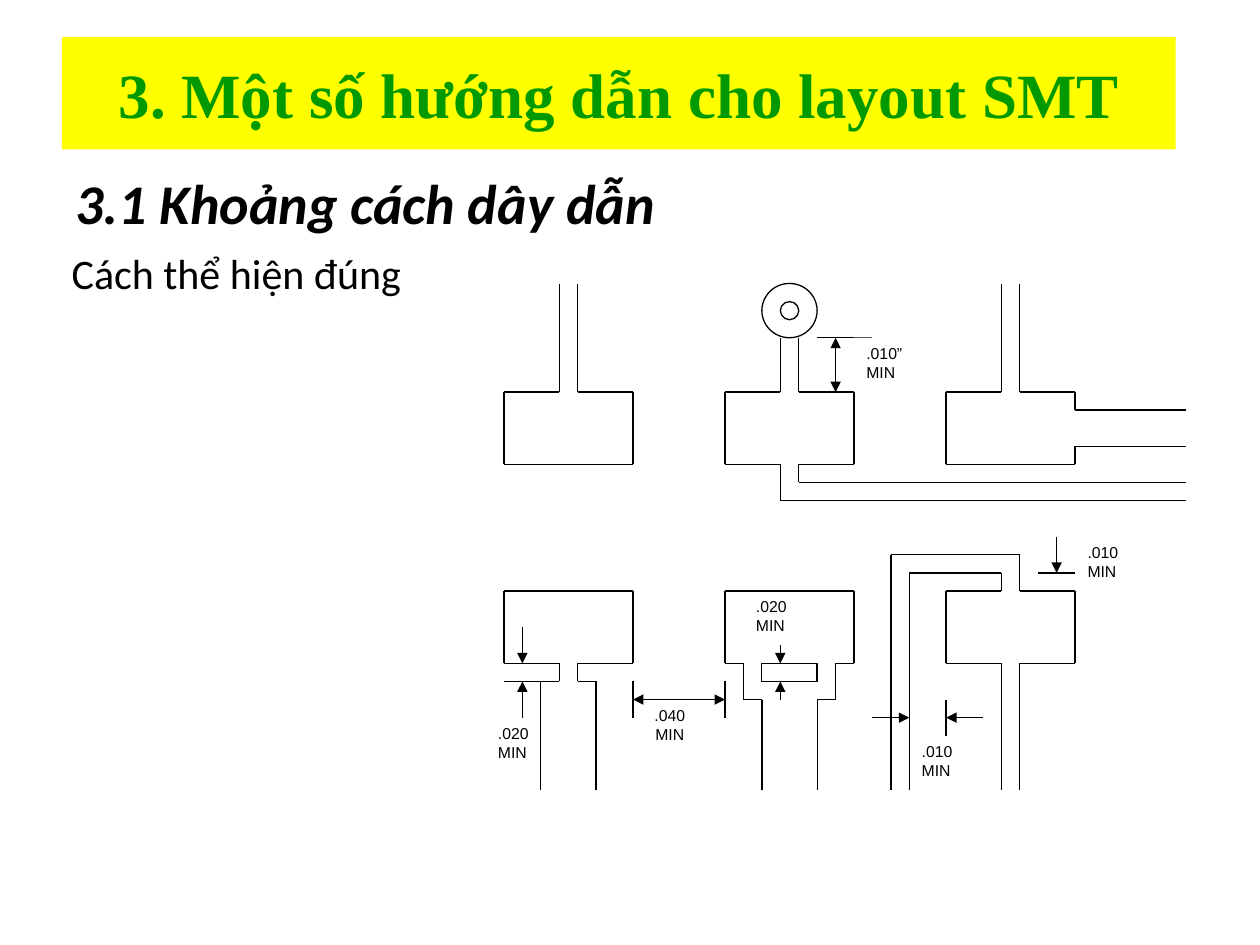
"""Builds the slide on trace spacing for SMT layouts."""
from dataclasses import dataclass
from itertools import pairwise

from lxml import etree
from pptx import Presentation
from pptx import util as u
from pptx.dml.color import RGBColor
from pptx.enum import shapes, text
from pptx.oxml.ns import qn

WIDTH, HEIGHT = 10, 7.5
LEFT, TOP = 4, 2.25
COLUMN, ROW = 5.41 / 37, 4.02 / 28
BLACK, WHITE, YELLOW, GREEN = "000000", "FFFFFF", "FFFF00", "009900"
LEFT_ALIGN, CENTER = text.PP_ALIGN.LEFT, text.PP_ALIGN.CENTER
RECTANGLE, OVAL = shapes.MSO_SHAPE.RECTANGLE, shapes.MSO_SHAPE.OVAL

Point = tuple[int, int]
Cells = tuple[int, int, int, int]


@dataclass
class Label:
    cells: Cells
    value: str
    align: text.PP_ALIGN = LEFT_ALIGN


@dataclass
class Arrow:
    start: Point
    end: Point
    double: bool = False


@dataclass
class Heading:
    area: tuple[float, float, float, float]
    words: str
    size: int
    strong: bool = False


HEADINGS = [
    Heading((0.05, 0.172, 0.876, 0.117), "3.1 Khoảng cách dây dẫn", 32, True),
    Heading((0.047, 0.255, 0.815, 0.125), "Cách thể hiện đúng", 24),
]
PAD_LABELS = [
    Label((22, 25, 4, 3), ".010"),
    Label((13, 17, 5, 4), ".020"),
    Label((7, 23, 4, 3), ".040", CENTER),
    Label((-1, 24, 4, 3), ".020"),
]
EDGE_LABELS = [
    Label((19, 3, 4, 3), ".010”"),
    Label((31, 14, 5, 3), ".010"),
]
OUTLINES = [
    [(3, 0), (3, 6), (0, 6), (0, 10), (7, 10), (7, 6), (4, 6), (4, 0)],
    [(15, 3), (15, 6), (12, 6), (12, 10), (15, 10), (15, 12), (37, 12)],
    [(16, 3), (16, 6), (19, 6), (19, 10), (16, 10), (16, 11), (37, 11)],
    [(27, 0), (27, 6), (24, 6), (24, 10), (31, 10), (31, 9), (37, 9)],
    [(28, 0), (28, 6), (31, 6), (31, 7), (37, 7)],
    [(2, 28), (2, 22), (3, 22), (3, 21), (0, 21), (0, 17),
     (7, 17), (7, 21), (4, 21), (4, 22), (5, 22), (5, 28)],
    [(14, 28), (14, 23), (13, 23), (13, 21), (12, 21), (12, 17),
     (19, 17), (19, 21), (18, 21), (18, 23), (17, 23), (17, 28)],
    [(21, 28), (21, 15), (28, 15), (28, 17), (31, 17), (31, 21), (28, 21), (28, 28)],
    [(22, 28), (22, 16), (27, 16), (27, 17), (24, 17), (24, 21), (27, 21), (27, 28)],
]
EXTENSIONS = [
    [(17, 3), (20, 3)],
    [(2, 22), (0, 22)],
    [(7, 22), (7, 24)],
    [(12, 22), (12, 24)],
    [(24, 23), (24, 25)],
    [(29, 16), (31, 16)],
]
ARROWS = [
    Arrow((18, 3), (18, 6), True),
    Arrow((7, 23), (12, 23), True),
    Arrow((1, 19), (1, 21)),
    Arrow((1, 24), (1, 22)),
    Arrow((15, 20), (15, 21)),
    Arrow((15, 23), (15, 22)),
    Arrow((26, 24), (24, 24)),
    Arrow((20, 24), (22, 24)),
    Arrow((30, 14), (30, 16)),
]


def color(value: str) -> RGBColor:
    """Turn a hex string into a colour."""
    return RGBColor.from_string(value)


def place(point: Point) -> tuple[int, int]:
    """Turn a grid point into slide lengths."""
    return u.Inches(LEFT + point[0] * COLUMN), u.Inches(TOP + point[1] * ROW)


def share(area: tuple[float, float, float, float]) -> list[int]:
    """Turn shares of the slide into lengths."""
    return [u.Inches(part * side) for part, side in zip(area, (WIDTH, HEIGHT) * 2)]


def write(para, words: str, font: str, size: int, ink: str = BLACK, bold=False, italic=False) -> None:
    """Add one formatted run to a paragraph."""
    span = para.add_run()
    span.text = words
    span.font.name, span.font.size = font, u.Pt(size)
    span.font.bold, span.font.italic = bold, italic
    span.font.color.rgb = color(ink)


def draw_shape(page, kind: shapes.MSO_SHAPE, cells: Cells, outlined: bool = True):
    """Draw a white shape covering grid cells."""
    column, row, columns, rows = cells
    box = page.shapes.add_shape(
        kind, *place((column, row)), u.Inches(columns * COLUMN), u.Inches(rows * ROW))
    box.shadow.inherit = False
    box.fill.solid()
    box.fill.fore_color.rgb = color(WHITE)
    if outlined:
        box.line.color.rgb, box.line.width = color(BLACK), u.Pt(0.75)
    else:
        box.line.fill.background()
    return box


def draw_label(page, label: Label) -> None:
    """Draw a minimum distance over its MIN line."""
    frame = draw_shape(page, RECTANGLE, label.cells, False).text_frame
    frame.word_wrap = True
    frame.vertical_anchor = text.MSO_ANCHOR.TOP
    for para, words in zip((frame.paragraphs[0], frame.add_paragraph()), (label.value, "MIN")):
        para.alignment = label.align
        write(para, words, "Arial", 9)


def draw_line(page, start: Point, end: Point, heads: tuple[str, ...] = ()) -> None:
    """Draw a thin line with arrowheads at the named ends."""
    line = page.shapes.add_connector(shapes.MSO_CONNECTOR.STRAIGHT, *place(start), *place(end))
    line.line.color.rgb, line.line.width = color(BLACK), u.Pt(0.75)
    for head in heads:
        etree.SubElement(line.line._get_or_add_ln(), qn(f"a:{head}"), type="triangle")
    etree.SubElement(line._element.spPr, qn("a:effectLst"))


def draw_heading(page, heading: Heading) -> None:
    """Draw a line of body text."""
    frame = page.shapes.add_textbox(*share(heading.area)).text_frame
    frame.word_wrap = True
    para = frame.paragraphs[0]
    para.space_before = u.Pt(heading.size * 0.2)
    write(para, heading.words, "Calibri", heading.size, bold=heading.strong, italic=heading.strong)


def format_title(title) -> None:
    """Move and format the title placeholder."""
    title.left, title.top, title.width, title.height = share((0.049, 0.039, 0.884, 0.119))
    title.fill.solid()
    title.fill.fore_color.rgb = color(YELLOW)
    title.text_frame.vertical_anchor = text.MSO_ANCHOR.MIDDLE
    para = title.text_frame.paragraphs[0]
    para.alignment = CENTER
    write(para, "3. Một số hướng dẫn cho layout SMT", "Times New Roman", 36, GREEN, bold=True)


def main() -> None:
    """Build and save the deck."""
    deck = Presentation()
    deck.slide_width, deck.slide_height = u.Inches(WIDTH), u.Inches(HEIGHT)
    page = deck.slides.add_slide(deck.slide_layouts[5])
    format_title(page.shapes.title)
    for label in PAD_LABELS:
        draw_label(page, label)
    for chain in OUTLINES + EXTENSIONS:
        for start, end in pairwise(chain):
            draw_line(page, start, end)
    for kind, cells in ((OVAL, (14, 0, 3, 3)), (OVAL, (15, 1, 1, 1)), (RECTANGLE, (14, 21, 3, 1))):
        draw_shape(page, kind, cells)
    for arrow in ARROWS:
        draw_line(page, arrow.start, arrow.end, ("headEnd", "tailEnd") if arrow.double else ("tailEnd",))
    for label in EDGE_LABELS:
        draw_label(page, label)
    for heading in HEADINGS:
        draw_heading(page, heading)
    deck.save("out.pptx")


if __name__ == "__main__":
    main()
